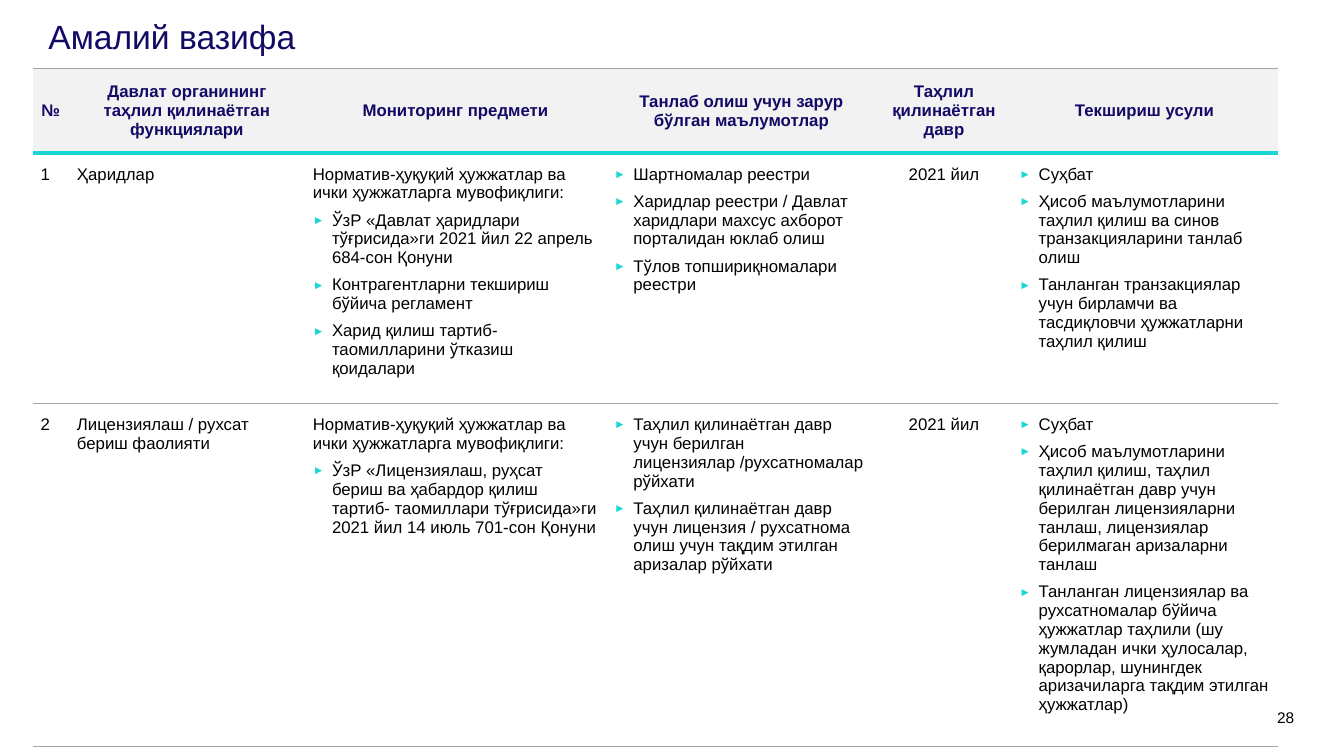
from lxml.etree import SubElement
from pptx import Presentation
from pptx.dml.color import RGBColor
from pptx.enum.text import MSO_ANCHOR as Anchor, PP_ALIGN as Align
from pptx.oxml.ns import qn
from pptx.util import Pt

# Content
TITLE = "Амалий вазифа"
PAGE_NUMBER = "28"
HEADINGS = [
    "№",
    "Давлат органининг таҳлил қилинаётган функциялари",
    "Мониторинг предмети",
    "Танлаб олиш учун зарур бўлган маълумотлар",
    "Таҳлил қилинаётган давр",
    "Текшириш усули",
]
# Each cell holds plain paragraphs, then bulleted ones
TASKS = [
    [
        (["1"], []),
        (["Ҳаридлар"], []),
        (["Норматив-ҳуқуқий ҳужжатлар ва ички ҳужжатларга мувофиқлиги:"],
         ["ЎзР «Давлат ҳаридлари тўғрисида»ги 2021 йил 22 апрель 684-сон Қонуни",
          "Контрагентларни текшириш бўйича регламент",
          "Харид қилиш тартиб-таомилларини ўтказиш қоидалари"]),
        ([], ["Шартномалар реестри",
              "Харидлар реестри / Давлат харидлари махсус ахборот порталидан юклаб олиш",
              "Тўлов топшириқномалари реестри"]),
        (["2021 йил"], []),
        ([], ["Суҳбат",
              "Ҳисоб маълумотларини таҳлил қилиш ва синов транзакцияларини танлаб олиш",
              "Танланган транзакциялар учун бирламчи ва тасдиқловчи ҳужжатларни таҳлил қилиш"]),
    ],
    [
        (["2"], []),
        (["Лицензиялаш / рухсат бериш фаолияти"], []),
        (["Норматив-ҳуқуқий ҳужжатлар ва ички ҳужжатларга мувофиқлиги:"],
         ["ЎзР «Лицензиялаш, руҳсат бериш ва ҳабардор қилиш тартиб- таомиллари "
          "тўғрисида»ги 2021 йил 14 июль 701-сон Қонуни"]),
        ([], ["Таҳлил қилинаётган давр учун берилган лицензиялар /рухсатномалар рўйхати",
              "Таҳлил қилинаётган давр учун лицензия / рухсатнома олиш учун тақдим "
              "этилган аризалар рўйхати"]),
        (["2021 йил"], []),
        ([], ["Суҳбат",
              "Ҳисоб маълумотларини таҳлил қилиш, таҳлил қилинаётган давр учун берилган "
              "лицензияларни танлаш, лицензиялар берилмаган аризаларни танлаш",
              "Танланган лицензиялар ва рухсатномалар бўйича ҳужжатлар таҳлили (шу жумладан "
              "ички ҳулосалар, қарорлар, шунингдек аризачиларга тақдим этилган ҳужжатлар)"]),
    ],
]

# Look
FONT = "Arial"
NAVY = RGBColor(0x13, 0x0A, 0x65)
TEAL = RGBColor(0x1B, 0xD7, 0xD3)
GREY = RGBColor(0xA6, 0xA6, 0xA6)
PALE = RGBColor(0xF2, 0xF2, 0xF2)
BLACK = RGBColor(0, 0, 0)
COLUMN_WIDTHS = [26, 168.5, 215.3, 193, 96.5, 190]
ROW_HEIGHTS = [58, 169, 231]
PERIOD_COLUMN = 4
THIN, THICK = (GREY, 0.5), (TEAL, 3)
RULES = [THIN, THICK, THIN, THIN]  # horizontal lines, top to bottom
BULLET_INDENT = 13.68


def style(paragraph, size, color, bold=False, align=Align.LEFT):
    paragraph.alignment = align
    font = paragraph.font
    for run in paragraph.runs:
        font = run.font
        font.name, font.size, font.bold = FONT, Pt(size), bold
        font.color.rgb = color


def add_line(slide, text, left, top, width, height, size, color, align):
    frame = slide.shapes.add_textbox(Pt(left), Pt(top), Pt(width), Pt(height)).text_frame
    frame.margin_left = frame.margin_right = frame.margin_top = frame.margin_bottom = 0
    frame.word_wrap = True
    frame.text = text
    style(frame.paragraphs[0], size, color, align=align)
    return frame.paragraphs[0]


def add_bullet(paragraph):
    props = paragraph._p.get_or_add_pPr()
    props.set("marL", str(Pt(BULLET_INDENT)))
    props.set("indent", str(-Pt(BULLET_INDENT)))
    color = SubElement(props, qn("a:buClr"))
    SubElement(color, qn("a:srgbClr"), val=str(TEAL))
    SubElement(props, qn("a:buSzPct"), val="70000")
    SubElement(props, qn("a:buFont"), typeface=FONT)
    SubElement(props, qn("a:buChar"), char="►")


def set_borders(cell, top, bottom):
    props = cell._tc.get_or_add_tcPr()
    for side, rule in (("L", None), ("R", None), ("T", top), ("B", bottom)):
        line = SubElement(props, qn("a:ln" + side))
        if rule is None:
            SubElement(line, qn("a:noFill"))
            continue
        color, width = rule
        line.set("w", str(Pt(width)))
        fill = SubElement(line, qn("a:solidFill"))
        SubElement(fill, qn("a:srgbClr"), val=str(color))


def fill_cell(cell, row, column, plain, bulleted):
    header = row == 0
    set_borders(cell, RULES[row], RULES[row + 1])
    if header:
        cell.fill.solid()
        cell.fill.fore_color.rgb = PALE
    else:
        cell.fill.background()
    cell.margin_left = cell.margin_right = Pt(5.67)
    cell.margin_top = cell.margin_bottom = Pt(8.5)
    cell.vertical_anchor = Anchor.MIDDLE if header else Anchor.TOP
    centred = header or column == PERIOD_COLUMN
    frame = cell.text_frame
    for i, text in enumerate(plain + bulleted):
        paragraph = frame.add_paragraph() if i else frame.paragraphs[0]
        paragraph.text = text
        if i >= len(plain):
            add_bullet(paragraph)
        paragraph.space_after = Pt(6)
        style(paragraph, 12, NAVY if header else BLACK, header,
              Align.CENTER if centred else Align.LEFT)


def main():
    deck = Presentation()
    deck.slide_width, deck.slide_height = Pt(960), Pt(540)
    slide = deck.slides.add_slide(deck.slide_layouts[6])

    # Page number
    add_line(slide, PAGE_NUMBER, 893.5, 505.5, 31, 12, 11, BLACK, Align.RIGHT)

    # Task table
    rows = [[([text], []) for text in HEADINGS]] + TASKS
    table = slide.shapes.add_table(
        len(rows), len(HEADINGS), Pt(23.3), Pt(49),
        Pt(sum(COLUMN_WIDTHS)), Pt(sum(ROW_HEIGHTS))).table
    table.first_row = table.horz_banding = False
    for column, width in zip(table.columns, COLUMN_WIDTHS):
        column.width = Pt(width)
    for row, height in zip(table.rows, ROW_HEIGHTS):
        row.height = Pt(height)
    for r, cells in enumerate(rows):
        for c, (plain, bulleted) in enumerate(cells):
            fill_cell(table.cell(r, c), r, c, plain, bulleted)

    # Title
    title = add_line(slide, TITLE, 34.6, 14.4, 891, 34.6, 24, NAVY, Align.LEFT)
    title.line_spacing = 0.9

    deck.save("out.pptx")


if __name__ == "__main__":
    main()
